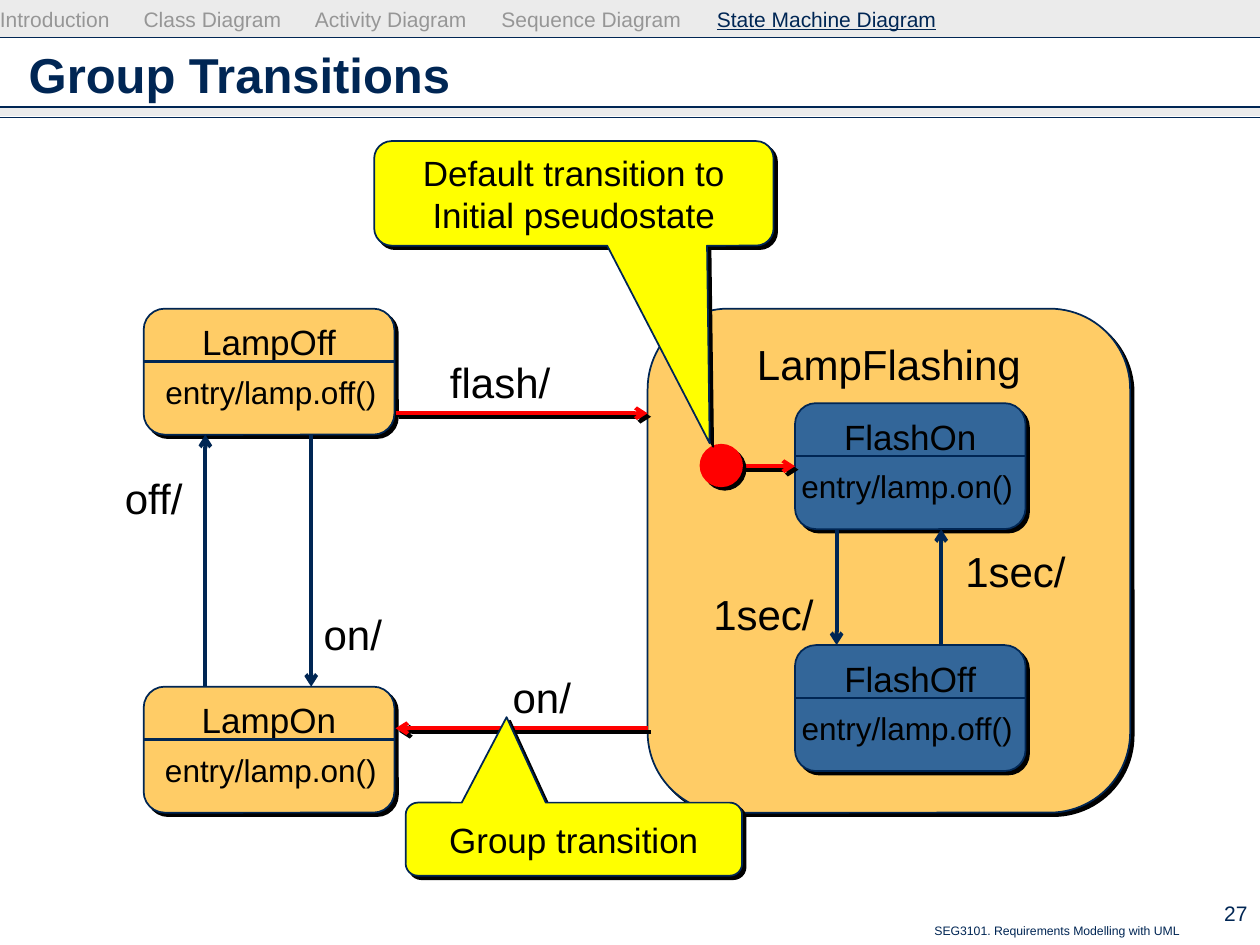
from dataclasses import dataclass
from typing import Optional

from lxml import etree
from pptx import Presentation
from pptx.dml.color import RGBColor
from pptx.enum.shapes import MSO_CONNECTOR, MSO_SHAPE
from pptx.enum.text import MSO_ANCHOR, PP_ALIGN
from pptx.oxml.ns import qn
from pptx.util import Inches, Pt

STRAIGHT = MSO_CONNECTOR.STRAIGHT
RECT, ROUND, OVAL = MSO_SHAPE.RECTANGLE, MSO_SHAPE.ROUNDED_RECTANGLE, MSO_SHAPE.OVAL
CALLOUT = MSO_SHAPE.ROUNDED_RECTANGULAR_CALLOUT
TOP, MIDDLE = MSO_ANCHOR.TOP, MSO_ANCHOR.MIDDLE
LEFT, CENTER, RIGHT = PP_ALIGN.LEFT, PP_ALIGN.CENTER, PP_ALIGN.RIGHT


@dataclass(frozen=True)
class Theme:
    font: str = "Arial"
    navy: str = "002654"
    grey: str = "969696"
    band: str = "CDCDCD"
    black: str = "000000"
    orange: str = "FFCC66"
    blue: str = "336699"
    red: str = "FF0000"
    yellow: str = "FFFF00"
    title: int = 28
    label: int = 24
    name: int = 20
    entry: int = 18
    small: int = 12
    footer: int = 7


T = Theme()


@dataclass(frozen=True)
class Box:
    x: float
    y: float
    w: float
    h: float


@dataclass(frozen=True)
class State:
    name: str
    entry: str
    box: Box
    entry_x: float
    fill: str


@dataclass(frozen=True)
class Transition:
    start: tuple[float, float]
    end: tuple[float, float]
    color: str = T.navy
    label: str = ""
    label_box: Optional[Box] = None


@dataclass(frozen=True)
class Callout:
    lines: tuple[str, ...]
    box: Box
    tip: tuple[float, float]


STATE_H, DIVIDER_Y, ENTRY_Y = 1, 0.42, 0.46
STATES = [
    State("FlashOff", "entry/lamp.off()", Box(6.31, 5.12, 1.83, STATE_H), 6.26, T.blue),
    State("FlashOn", "entry/lamp.on()", Box(6.31, 3.2, 1.83, STATE_H), 6.26, T.blue),
    State("LampOff", "entry/lamp.off()", Box(1.14, 2.45, 1.99, STATE_H), 1.21, T.orange),
    State("LampOn", "entry/lamp.on()", Box(1.14, 5.45, 1.99, STATE_H), 1.21, T.orange),
]
TRANSITIONS = [
    Transition((6.64, 4.2), (6.64, 5.12), T.navy, "1sec/", Box(5.56, 4.62, 1, 0.5)),
    Transition((7.47, 5.12), (7.47, 4.2), T.navy, "1sec/", Box(7.56, 4.28, 1, 0.5)),
    Transition((1.63, 5.45), (1.63, 3.45), T.navy, "off/", Box(0.89, 3.7, 0.66, 0.5)),
    Transition((2.47, 3.45), (2.47, 5.45), T.navy, "on/", Box(2.47, 4.78, 0.66, 0.5)),
    Transition((5.72, 3.7), (6.31, 3.7), T.red),
    Transition((3.14, 3.28), (5.14, 3.28), T.red, "flash/", Box(3.47, 2.78, 1, 0.5)),
    Transition((5.14, 5.78), (3.14, 5.78), T.red, "on/", Box(3.97, 5.28, 0.66, 0.5)),
]
CALLOUTS = [
    Callout(("Default transition to", "Initial pseudostate"),
            Box(2.97, 1.12, 3.17, 0.83), (0.34, 2.39)),
    Callout(("Group transition",), Box(3.22, 6.37, 2.67, 0.58), (-0.2, -1.67)),
]
SECTIONS = ["Introduction", "Class Diagram", "Activity Diagram", "Sequence Diagram",
            "State Machine Diagram"]
SECTION_TABS = [1.14, 2.5, 3.98, 5.69]


def rgb(color: str) -> RGBColor:
    return RGBColor.from_string(color)


def place(box: Box) -> tuple:
    return Inches(box.x), Inches(box.y), Inches(box.w), Inches(box.h)


def add_shadow(effects) -> None:
    shadow = etree.SubElement(effects, qn("a:outerShdw"), blurRad="0",
                              dist=str(Pt(2.8)), dir="2700000", algn="ctr", rotWithShape="0")
    etree.SubElement(shadow, qn("a:srgbClr"), val=T.black)


def write(sp, lines: tuple[str, ...], size: int, color: str = T.black,
          align=CENTER, anchor=MIDDLE, bold: bool = False) -> None:
    tf = sp.text_frame
    tf.word_wrap = False
    tf.vertical_anchor = anchor
    for i, line in enumerate(lines):
        p = tf.paragraphs[0] if i == 0 else tf.add_paragraph()
        p.text, p.alignment = line, align
        p.font.name, p.font.size, p.font.bold = T.font, Pt(size), bold
        p.font.color.rgb = rgb(color)


def add_text(s, box: Box, text: str, size: int, **style) -> None:
    write(s.shapes.add_textbox(*place(box)), (text,), size, **style)


def add_shape(s, kind, box: Box, fill: str, line: str = T.navy):
    """Add an outlined shape with a hard drop shadow."""
    sp = s.shapes.add_shape(kind, *place(box))
    sp.fill.solid()
    sp.fill.fore_color.rgb = rgb(fill)
    sp.line.color.rgb, sp.line.width = rgb(line), Pt(1)
    sp.shadow.inherit = False
    add_shadow(sp._element.spPr.find(qn("a:effectLst")))
    return sp


def add_line(s, start, end, width: float, color: str = T.navy,
             arrow: bool = False, shadow: bool = False) -> None:
    cx = s.shapes.add_connector(STRAIGHT, *map(Inches, (*start, *end)))
    cx.line.color.rgb, cx.line.width = rgb(color), Pt(width)
    if arrow:
        etree.SubElement(cx.line._get_or_add_ln(), qn("a:tailEnd"), type="arrow")
    effects = etree.SubElement(cx._element.spPr, qn("a:effectLst"))
    if shadow:
        add_shadow(effects)


def add_band(s, y: float, h: float) -> None:
    sp = s.shapes.add_shape(RECT, *place(Box(0, y, 10, h)))
    sp.fill.solid()
    sp.fill.fore_color.rgb = rgb(T.band)
    color = sp._element.spPr.find(qn("a:solidFill"))[0]
    etree.SubElement(color, qn("a:alpha"), val="40000")
    sp.line.fill.background()
    sp.shadow.inherit = False


def add_navigation(s) -> None:
    tf = s.shapes.add_textbox(*place(Box(0, 0.05, 7.9, 0.25))).text_frame
    tf.word_wrap = True
    tf.margin_left = tf.margin_top = 0
    p = tf.paragraphs[0]
    tabs = etree.SubElement(p._p.get_or_add_pPr(), qn("a:tabLst"))
    for x in SECTION_TABS:
        etree.SubElement(tabs, qn("a:tab"), pos=str(Inches(x)), algn="l")
    p.font.name, p.font.size = T.font, Pt(T.small)
    for section in SECTIONS:
        current = section == SECTIONS[-1]
        r = p.add_run()
        r.text = section if current else section + "\t"
        r.font.color.rgb = rgb(T.navy if current else T.grey)
        r.font.underline = current


def add_state(s, state: State) -> None:
    b = state.box
    write(add_shape(s, ROUND, b, state.fill), (state.name,), T.name, anchor=TOP)
    y = b.y + DIVIDER_Y
    add_line(s, (b.x, y), (b.x + b.w, y), 1.5)
    add_text(s, Box(state.entry_x, b.y + ENTRY_Y, 1.88, 0.4), state.entry, T.entry)


def add_transition(s, t: Transition) -> None:
    add_line(s, t.start, t.end, 2.25, t.color, arrow=True, shadow=t.color == T.red)
    if t.label_box:
        add_text(s, t.label_box, t.label, T.label)


def add_callout(s, c: Callout) -> None:
    sp = add_shape(s, CALLOUT, c.box, T.yellow)
    sp.adjustments[0], sp.adjustments[1] = c.tip
    write(sp, c.lines, T.name)


def main() -> None:
    prs = Presentation()
    prs.slide_width, prs.slide_height = Inches(10), Inches(7.5)
    s = prs.slides.add_slide(prs.slide_layouts[6])

    add_band(s, 0, 0.3)
    add_band(s, 0.85, 0.07)
    for y in (0.3, 0.85, 0.93):
        add_line(s, (0, y), (10, y), 0.75)
    add_navigation(s)
    add_text(s, Box(0.13, 0.26, 9.74, 0.66), "Group Transitions", T.title,
             color=T.navy, align=LEFT, bold=True)
    add_text(s, Box(3.25, 7.28, 6.21, 0.22), "SEG3101. Requirements Modelling with UML",
             T.footer, color=T.navy, align=RIGHT, anchor=TOP)
    add_text(s, Box(9.3, 7.08, 0.7, 0.34), "27", T.small, color=T.navy, align=RIGHT)

    flashing = add_shape(s, ROUND, Box(5.14, 2.45, 3.83, 4), T.orange)
    write(flashing, ("LampFlashing",), T.label, anchor=TOP)
    for state in STATES:
        add_state(s, state)
    for transition in TRANSITIONS:
        add_transition(s, transition)
    add_shape(s, OVAL, Box(5.56, 3.53, 0.33, 0.33), T.red, T.red)
    for callout in CALLOUTS:
        add_callout(s, callout)

    prs.save("out.pptx")


if __name__ == "__main__":
    main()
